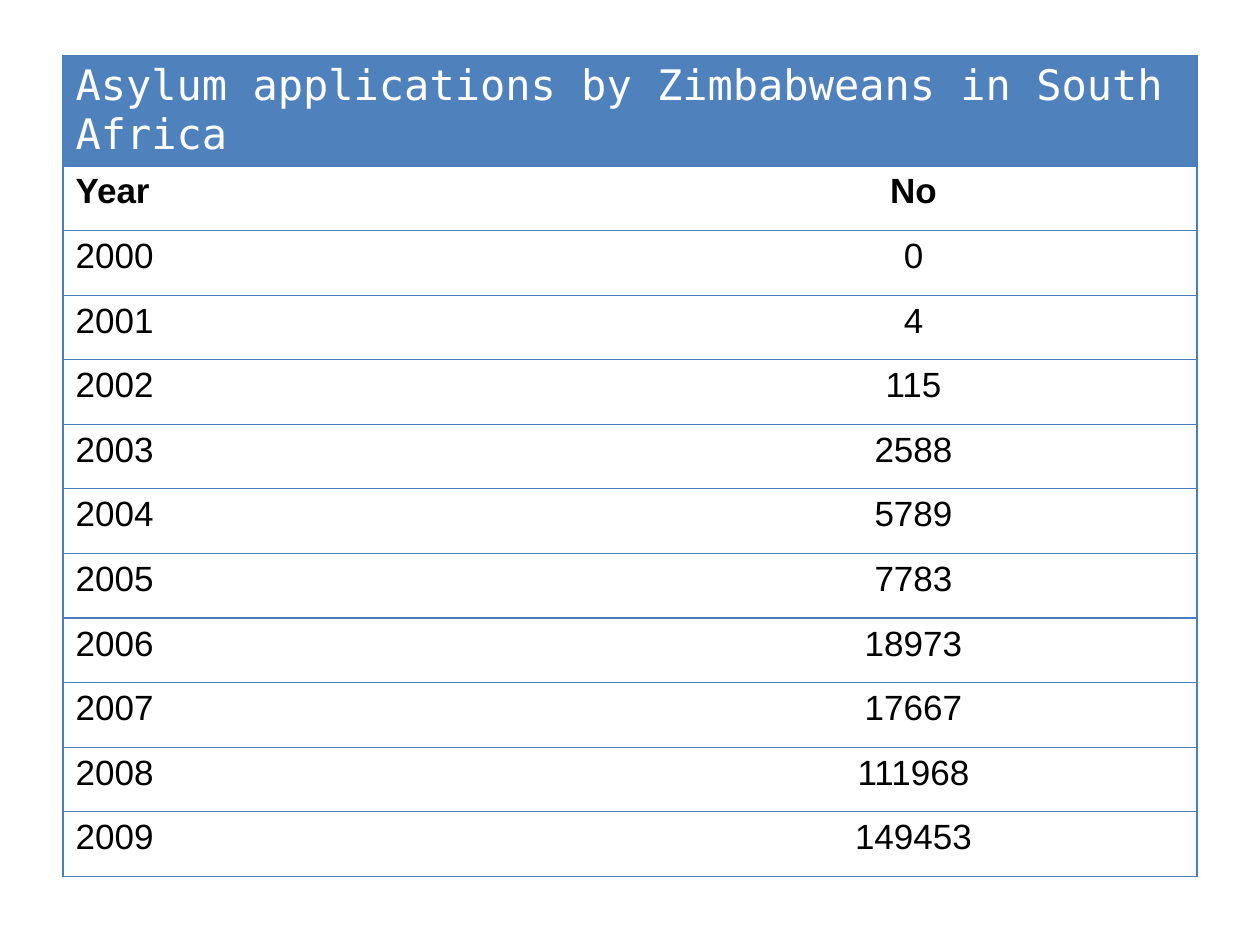
import pptx
import pptx.util
import pptx.dml.color
import pptx.enum.text
import pptx.oxml
import pptx.oxml.ns
from dataclasses import dataclass

# Content
HEADING = "Asylum applications by Zimbabweans in South Africa"
COLUMNS = ("Year", "No")
APPLICATIONS = [
    ("2000", "0"),
    ("2001", "4"),
    ("2002", "115"),
    ("2003", "2588"),
    ("2004", "5789"),
    ("2005", "7783"),
    ("2006", "18973"),
    ("2007", "17667"),
    ("2008", "111968"),
    ("2009", "149453"),
]


@dataclass(frozen=True)
class Theme:
    heading_fill: str = "4F81BD"
    border: str = "4B7EBC"
    heading_text: str = "FFFFFF"
    body_text: str = "000000"
    heading_font: str = "DejaVu Sans Mono"
    body_font: str = "Arial"
    heading_size: int = 24
    body_size: int = 20
    border_width: float = 0.75


THEME = Theme()

# Layout, in inches
SLIDE_WIDTH, SLIDE_HEIGHT = 10, 7.5
LEFT, TOP, HEIGHT = 0.5, 0.44, 6.27
WIDTH = SLIDE_WIDTH - 2 * LEFT
HEADING_HEIGHT = 0.63


def color(value):
    return pptx.dml.color.RGBColor.from_string(value)


def write(cell, text, font, size, ink, bold=False, centred=False):
    para = cell.text_frame.paragraphs[0]
    para.text = text
    align = pptx.enum.text.PP_ALIGN
    para.alignment = align.CENTER if centred else align.LEFT
    style = para.runs[0].font
    style.name, style.size, style.bold = font, pptx.util.Pt(size), bold
    style.color.rgb = color(ink)


def set_borders(cell, visible):
    """Draw the given sides of a cell and clear the others."""
    properties = cell._tc.get_or_add_tcPr()
    width = pptx.util.Pt(THEME.border_width)
    for position, side in enumerate("LRTB"):
        paint = (f'<a:solidFill><a:srgbClr val="{THEME.border}"/></a:solidFill>'
                 if side in visible else "<a:noFill/>")
        line = pptx.oxml.parse_xml(
            f'<a:ln{side} {pptx.oxml.ns.nsdecls("a")} w="{width}">{paint}</a:ln{side}>')
        properties.insert(position, line)


def main():
    deck = pptx.Presentation()
    deck.slide_width = pptx.util.Inches(SLIDE_WIDTH)
    deck.slide_height = pptx.util.Inches(SLIDE_HEIGHT)
    page = deck.slides.add_slide(deck.slide_layouts[6])

    # Table grid
    body = [COLUMNS, *APPLICATIONS]
    box = [pptx.util.Inches(length) for length in (LEFT, TOP, WIDTH, HEIGHT)]
    table = page.shapes.add_table(len(body) + 1, len(COLUMNS), *box).table
    table.first_row = table.horz_banding = False
    for column in table.columns:
        column.width = pptx.util.Inches(WIDTH / len(COLUMNS))
    row_height = (HEIGHT - HEADING_HEIGHT) / len(body)
    for index, row in enumerate(table.rows):
        row.height = pptx.util.Inches(row_height if index else HEADING_HEIGHT)

    # Heading across both columns
    heading = table.cell(0, 0)
    heading.merge(table.cell(0, len(COLUMNS) - 1))
    write(heading, HEADING, THEME.heading_font, THEME.heading_size, THEME.heading_text)
    for cell in table.rows[0].cells:
        cell.fill.solid()
        cell.fill.fore_color.rgb = color(THEME.heading_fill)
        set_borders(cell, "LRTB")

    # Column titles and yearly figures
    for row_index, values in enumerate(body, start=1):
        for column_index, value in enumerate(values):
            cell = table.cell(row_index, column_index)
            write(cell, value, THEME.body_font, THEME.body_size, THEME.body_text,
                  bold=values is COLUMNS, centred=column_index == 1)
            cell.fill.background()
            set_borders(cell, "RTB" if column_index else "LTB")

    deck.save("out.pptx")


if __name__ == "__main__":
    main()
